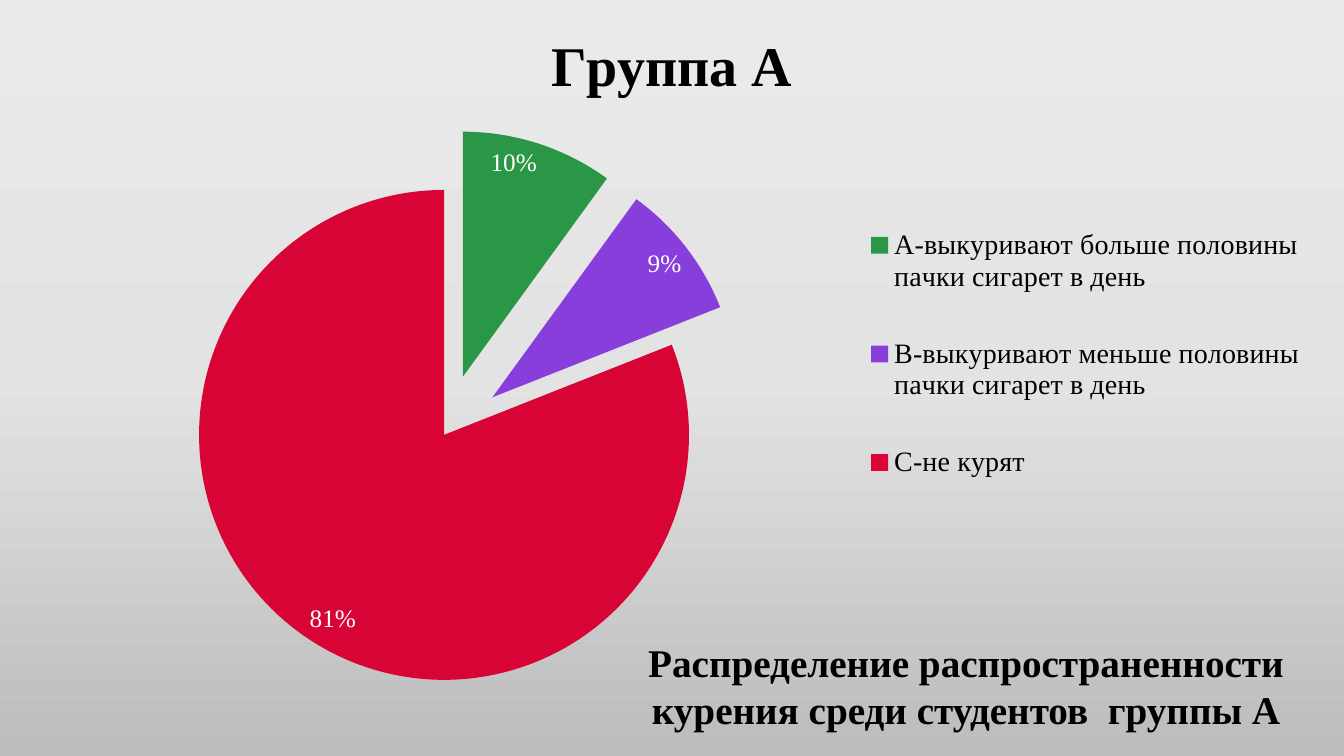
from copy import deepcopy

from lxml.etree import SubElement
from pptx import Presentation
from pptx.chart.data import CategoryChartData
from pptx.dml.color import RGBColor
from pptx.enum.chart import XL_CHART_TYPE, XL_LABEL_POSITION, XL_LEGEND_POSITION
from pptx.enum.text import MSO_AUTO_SIZE, PP_ALIGN
from pptx.oxml.ns import qn
from pptx.util import Pt

PX = 9071  # EMU per px, at 100.8 px to the inch
WIDTH, HEIGHT = 1344, 756
FONT = "Times New Roman"
COLORS = {
    "text": "000000",
    "label": "FFFFFF",
    "heavy": "299746",
    "light": "883EDA",
    "none": "D80436",
    "top": "EBEAEA",
    "middle": "E4E3E3",
    "bottom": "BDBCBC",
}


def style_font(font, size, color="text", bold=False):
    font.name = FONT
    font.size = Pt(size)
    font.bold = bold
    font.color.rgb = RGBColor.from_string(COLORS[color])


def place(element, index, left, top, width=None, height=None, inner=False):
    """Give a chart part a fixed position, in px of the slide."""
    for old in element.findall(qn("c:layout")):
        element.remove(old)
    layout = SubElement(element, qn("c:layout"))
    manual = SubElement(layout, qn("c:manualLayout"))
    settings = [("layoutTarget", "inner")] if inner else []
    settings += [("xMode", "edge"), ("yMode", "edge"),
                 ("x", round(left / WIDTH, 4)), ("y", round(top / HEIGHT, 4))]
    if width:
        settings += [("w", round(width / WIDTH, 4)), ("h", round(height / HEIGHT, 4))]
    for name, value in settings:
        SubElement(manual, qn(f"c:{name}")).set("val", str(value))
    element.insert(index, layout)


presentation = Presentation()
presentation.slide_width = WIDTH * PX
presentation.slide_height = HEIGHT * PX
slide = presentation.slides.add_slide(presentation.slide_layouts[6])

# Background gradient, from top to bottom
fill = slide.background.fill
fill.gradient()
fill.gradient_angle = 270
stop_list = next(slide.element.iter(qn("a:gsLst")))
stop_list.append(deepcopy(stop_list[0]))
for stop, position, name in zip(fill.gradient_stops, (0, 0.5, 1), ("top", "middle", "bottom")):
    stop.position = position
    stop.color.rgb = RGBColor.from_string(COLORS[name])

# Pie chart
chart_data = CategoryChartData()
chart_data.categories = [
    "А-выкуривают больше половины пачки сигарет в день",
    "В-выкуривают меньше половины пачки сигарет в день",
    "С-не курят",
]
chart_data.add_series("Группа А", (10, 9, 81))
chart = slide.shapes.add_chart(
    XL_CHART_TYPE.PIE, 0, 0, WIDTH * PX, HEIGHT * PX, chart_data).chart
style_font(chart.font, 18)
plot = chart.plots[0]
plot.vary_by_categories = True
place(chart.element.chart.plotArea, 0, 199, 190, 490, 490, inner=True)

# Slice colours
for index, name in enumerate(("heavy", "light", "none")):
    slice_format = plot.series[0].points[index].format
    slice_format.fill.solid()
    slice_format.fill.fore_color.rgb = RGBColor.from_string(COLORS[name])
    slice_format.line.fill.background()

# The two groups of smokers are pulled out
for point, explosion in zip(chart.element.iter(qn("c:dPt")), (25, 25, 0)):
    pulled = SubElement(point, qn("c:explosion"))
    pulled.set("val", str(explosion))
    point.find(qn("c:spPr")).addprevious(pulled)

# Percentages
labels = plot.series[0].data_labels
labels.show_percentage = True
labels.show_value = False
labels.number_format = "0%"
labels.number_format_is_linked = False
labels.position = XL_LABEL_POSITION.INSIDE_END
style_font(labels.font, 18, "label")

# Chart title
chart.has_title = True
title_frame = chart.chart_title.text_frame
title_frame.text = "Группа А"
style_font(title_frame.paragraphs[0].font, 40, bold=True)
place(chart.element.chart.find(qn("c:title")), 1, 541, 20)

# Legend
chart.has_legend = True
legend = chart.legend
legend.position = XL_LEGEND_POSITION.RIGHT
legend.include_in_layout = False
style_font(legend.font, 20)
place(chart.element.chart.find(qn("c:legend")), 1, 863, 184, 445, 340)

# Caption
caption = slide.shapes.add_textbox(613 * PX, 633 * PX, 706 * PX, 105 * PX)
frame = caption.text_frame
frame.word_wrap = True
frame.auto_size = MSO_AUTO_SIZE.SHAPE_TO_FIT_TEXT
paragraph = frame.paragraphs[0]
paragraph.text = "Распределение распространенности курения среди студентов  группы А"
paragraph.alignment = PP_ALIGN.CENTER
style_font(paragraph.font, 28, bold=True)

presentation.save("out.pptx")
